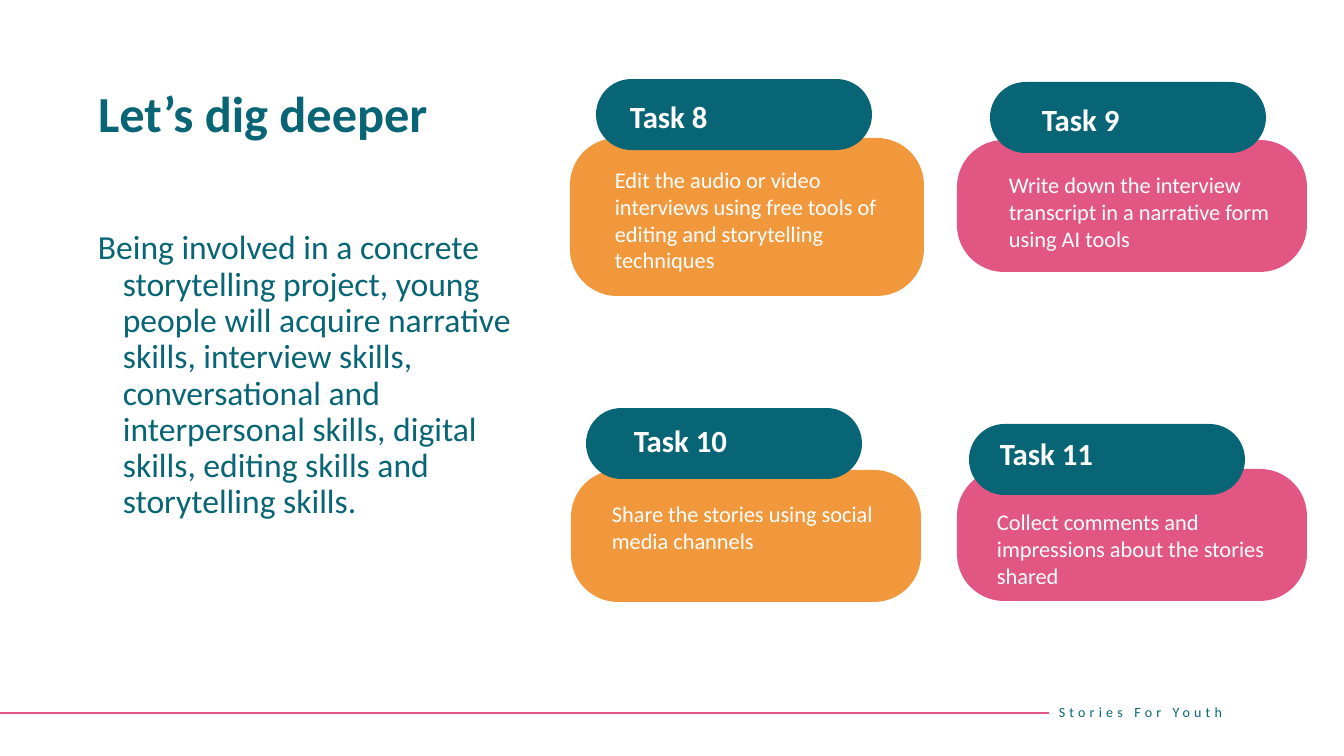
from lxml import etree
from pptx import Presentation
from pptx.dml.color import RGBColor
from pptx.enum.shapes import MSO_CONNECTOR, MSO_SHAPE
from pptx.enum.text import MSO_ANCHOR, MSO_AUTO_SIZE, PP_ALIGN
from pptx.oxml.ns import qn
from pptx.util import Pt

ROUNDED = MSO_SHAPE.ROUNDED_RECTANGLE
STRAIGHT = MSO_CONNECTOR.STRAIGHT
TOP, MIDDLE = MSO_ANCHOR.TOP, MSO_ANCHOR.MIDDLE
NO_AUTOFIT = MSO_AUTO_SIZE.NONE
LEFT = PP_ALIGN.LEFT

SLIDE_WIDTH, SLIDE_HEIGHT = 1344, 756
EMU_PER_PX = 12192000 / SLIDE_WIDTH
FONT = "Calibri"
TEAL, ORANGE, PINK, WHITE = "086575", "F1983D", "E25684", "FFFFFF"


def px(*lengths):
    return [round(length * EMU_PER_PX) for length in lengths]


def write(shape, text, size, color, bold=False, anchor=TOP):
    frame = shape.text_frame
    frame.word_wrap = True
    frame.auto_size = NO_AUTOFIT
    frame.vertical_anchor = anchor
    paragraph = frame.paragraphs[0]
    paragraph.alignment = LEFT
    run = paragraph.add_run()
    run.text = text
    run.font.name = FONT
    run.font.size = Pt(size)
    run.font.bold = bold
    run.font.color.rgb = RGBColor.from_string(color)
    return paragraph


presentation = Presentation()
presentation.slide_width, presentation.slide_height = px(SLIDE_WIDTH, SLIDE_HEIGHT)
slide = presentation.slides.add_slide(presentation.slide_layouts[5])
shapes = slide.shapes

# Title
title = shapes.title
title.left, title.top, title.width, title.height = px(88, 84, 464, 89)
write(title, "Let’s dig deeper", 36, TEAL, bold=True).line_spacing = 0.9

# Introduction with a hanging indent
introduction = shapes.add_textbox(*px(88, 226, 464, 424))
paragraph = write(
    introduction,
    "Being involved in a concrete storytelling project, young people will acquire "
    "narrative skills, interview skills, conversational and interpersonal skills, "
    "digital skills, editing skills and storytelling skills.",
    24, TEAL)
paragraph.line_spacing = 0.9
indent = px(25)[0]
properties = paragraph._p.get_or_add_pPr()
properties.set("marL", str(indent))
properties.set("indent", str(-indent))

# Tasks: heading, text, colour, card, pill corner, heading box, text box
tasks = [
    ("Task 8", "Edit the audio or video interviews using free tools of editing and "
     "storytelling techniques", ORANGE,
     (570, 138, 354, 158), (596, 79), (620, 93, 276, 47), (605, 161, 297, 119)),
    ("Task 9", "Write down the interview transcript in a narrative form using AI tools",
     PINK,
     (957, 140, 350, 132), (990, 82), (1032, 96, 224, 47), (999, 166, 287, 92)),
    ("Task 10", "Share the stories using social media channels", ORANGE,
     (571, 470, 350, 132), (586, 408), (624, 417, 214, 47), (602, 495, 287, 65)),
    ("Task 11", "Collect comments and impressions about the stories shared", PINK,
     (957, 469, 350, 132), (969, 424), (990, 430, 235, 47), (987, 503, 299, 92)),
]
PILL_SIZE = (276, 71)
CARD_RADIUS, PILL_RADIUS = 47, 35.5

for heading, text, color, card, pill_corner, heading_box, text_box in tasks:
    pill = pill_corner + PILL_SIZE
    for box, fill, radius in ((card, color, CARD_RADIUS), (pill, TEAL, PILL_RADIUS)):
        shape = shapes.add_shape(ROUNDED, *px(*box))
        shape.adjustments[0] = radius / box[3]
        shape.shadow.inherit = False
        shape.fill.solid()
        shape.fill.fore_color.rgb = RGBColor.from_string(fill)
        shape.line.fill.background()
    write(shapes.add_textbox(*px(*heading_box)), heading, 22, WHITE, bold=True)
    write(shapes.add_textbox(*px(*text_box)), text, 16, WHITE)

# Footer line and letter-spaced label
footer_line = shapes.add_connector(STRAIGHT, *px(0, 713, 1049, 713))
footer_line.line.color.rgb = RGBColor.from_string(PINK)
footer_line.line.width = Pt(1.5)
etree.SubElement(footer_line._element.spPr, qn("a:effectLst"))

footer = shapes.add_textbox(*px(1049, 692, 275, 40))
paragraph = write(footer, "Stories For Youth", 10, TEAL, anchor=MIDDLE)
paragraph.runs[0]._r.get_or_add_rPr().set("spc", "300")

presentation.save("out.pptx")
